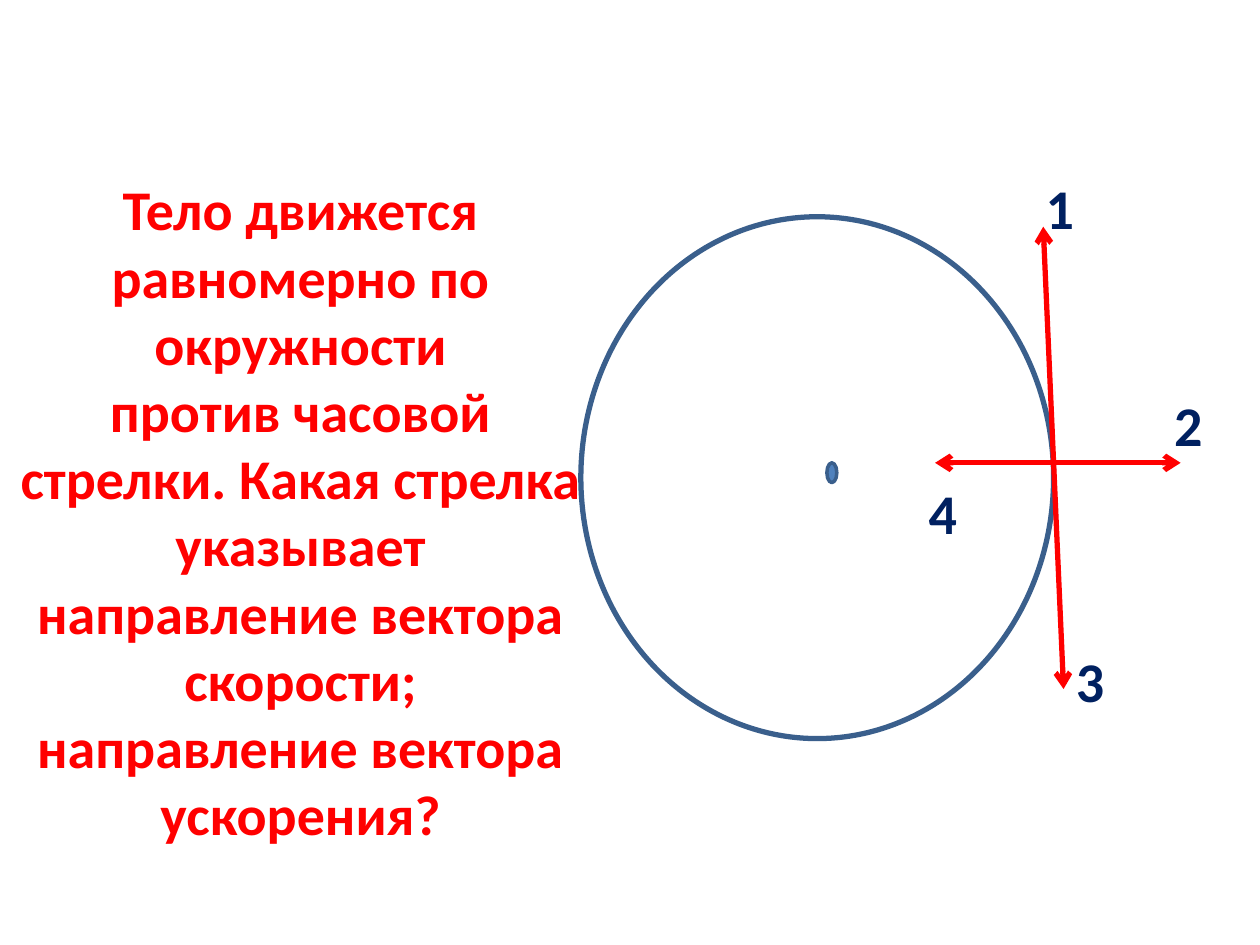
from lxml.etree import SubElement
from pptx import Presentation
from pptx.dml.color import RGBColor
from pptx.enum.shapes import MSO_CONNECTOR, MSO_SHAPE
from pptx.enum.text import MSO_AUTO_SIZE, PP_ALIGN
from pptx.oxml.ns import qn
from pptx.util import Cm, Pt

RED, NAVY, BLUE, EDGE, WHITE = "FF0000", "002060", "4F81BD", "3A5F8C", "FFFFFF"
FONT = {"name": "Calibri", "size": Pt(32), "bold": True}
TASK = [
    "Тело движется равномерно по окружности",
    "против часовой стрелки. Какая стрелка",
    "указывает направление вектора скорости;",
    "направление вектора ускорения?",
]
MARKS = {"1": (20.83, 3.38), "2": (23.42, 7.75), "3": (21.44, 12.9), "4": (18.47, 9.53)}


def color(code):
    return RGBColor.from_string(code)


def add_text(slide, box, lines, tint, align):
    frame = slide.shapes.add_textbox(*map(Cm, box)).text_frame
    frame.word_wrap = True
    frame.auto_size = MSO_AUTO_SIZE.SHAPE_TO_FIT_TEXT
    frame.text = "\n".join(lines)
    for para in frame.paragraphs:
        para.alignment = align
        for key, value in FONT.items():
            setattr(para.font, key, value)
        para.font.color.rgb = color(tint)


def add_oval(slide, box, fill, width):
    oval = slide.shapes.add_shape(MSO_SHAPE.OVAL, *map(Cm, box))
    oval.shadow.inherit = False
    oval.fill.solid()
    oval.fill.fore_color.rgb = color(fill)
    oval.line.color.rgb = color(EDGE)
    oval.line.width = Pt(width)


def add_arrow(slide, ends):
    """Draw a red line with an open arrowhead at both ends."""
    arrow = slide.shapes.add_connector(MSO_CONNECTOR.STRAIGHT, *map(Cm, ends))
    arrow.line.color.rgb = color(RED)
    arrow.line.width = Pt(3)
    props = arrow.line._get_or_add_ln()
    for tag in ("a:headEnd", "a:tailEnd"):
        SubElement(props, qn(tag), type="arrow")
    SubElement(arrow._element.spPr, qn("a:effectLst"))


def main():
    deck = Presentation()
    deck.slide_width, deck.slide_height = Cm(25.4), Cm(19.05)
    slide = deck.slides.add_slide(deck.slide_layouts[6])
    add_text(slide, (0, 3.4, 12.12, 15.29), TASK, RED, PP_ALIGN.CENTER)
    add_oval(slide, (11.71, 4.37, 9.53, 10.52), WHITE, 3)
    add_oval(slide, (16.67, 9.33, 0.2, 0.4), BLUE, 2)
    for ends in ((21.03, 4.57, 21.44, 13.89), (18.85, 9.33, 23.8, 9.33)):
        add_arrow(slide, ends)
    for mark, spot in MARKS.items():
        add_text(slide, (*spot, 1.98, 1.62), [mark], NAVY, PP_ALIGN.LEFT)
    deck.save("out.pptx")


if __name__ == "__main__":
    main()
